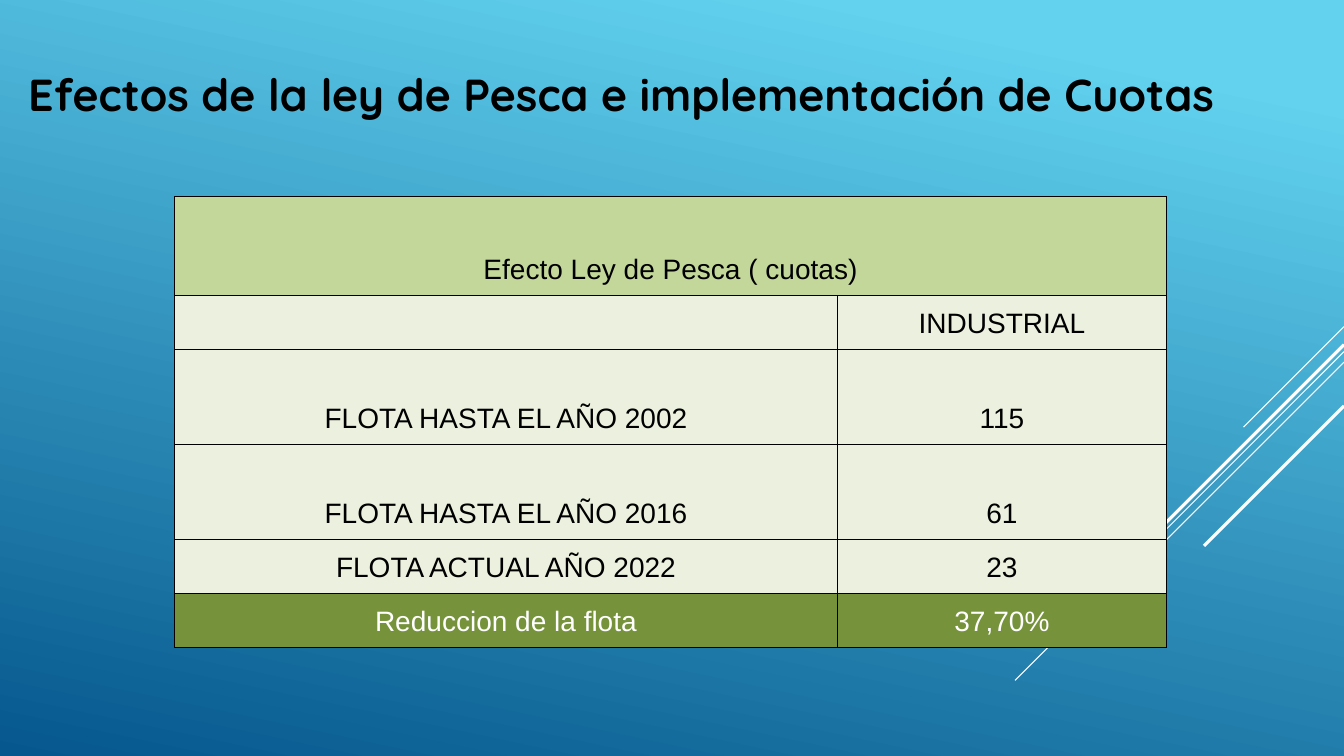
from lxml import etree
from pptx import Presentation
from pptx.dml.color import RGBColor
from pptx.enum.shapes import MSO_CONNECTOR
from pptx.enum.text import MSO_ANCHOR, MSO_AUTO_SIZE, PP_ALIGN
from pptx.oxml.ns import qn
from pptx.util import Inches, Pt

STRAIGHT = MSO_CONNECTOR.STRAIGHT
BOTTOM, MIDDLE = MSO_ANCHOR.BOTTOM, MSO_ANCHOR.MIDDLE
CENTER, LEFT = PP_ALIGN.CENTER, PP_ALIGN.LEFT
GROW = MSO_AUTO_SIZE.SHAPE_TO_FIT_TEXT
TITLE_ONLY = 5

BLACK = RGBColor(0x00, 0x00, 0x00)
WHITE = RGBColor(0xFF, 0xFF, 0xFF)
SKY = RGBColor(0x62, 0xD2, 0xEF)
OCEAN = RGBColor(0x05, 0x57, 0x8D)
HEADER_GREEN = RGBColor(0xC4, 0xD7, 0x9B)
PALE_GREEN = RGBColor(0xEB, 0xF1, 0xDE)
TOTAL_GREEN = RGBColor(0x76, 0x93, 0x3C)

SLIDE_WIDTH, SLIDE_HEIGHT = Inches(13.33), Inches(7.5)

# Start and reach in percent of the slide height, width in points
DIAGONALS = [
    (43.2, 13.3, 0.75),
    (46.5, 43.5, 0.75),
    (47.9, 27.6, 0.75),
    (45.6, 25.5, 2.25),
    (53.7, 18.5, 2.25),
]

# Height in percent of the slide, fill, text colour, cell texts
FLEET_ROWS = [
    (13.1, HEADER_GREEN, BLACK, ["Efecto Ley de Pesca ( cuotas)"]),
    (7.1, PALE_GREEN, BLACK, ["", "INDUSTRIAL"]),
    (12.6, PALE_GREEN, BLACK, ["FLOTA HASTA EL AÑO 2002", "115"]),
    (12.6, PALE_GREEN, BLACK, ["FLOTA HASTA EL AÑO 2016", "61"]),
    (7.1, PALE_GREEN, BLACK, ["FLOTA ACTUAL AÑO 2022", "23"]),
    (7.1, TOTAL_GREEN, WHITE, ["Reduccion de la flota", "37,70%"]),
]
FLEET_COLUMNS = [49.3, 24.5]

CELL_FORMAT = {
    "vertical_anchor": BOTTOM,
    "margin_left": Inches(0.01),
    "margin_right": Inches(0.01),
    "margin_top": Inches(0.01),
    "margin_bottom": Inches(0.1),
}


def across(percent):
    return round(SLIDE_WIDTH * percent / 100)


def down(percent):
    return round(SLIDE_HEIGHT * percent / 100)


def apply(target, values):
    for name, value in values.items():
        setattr(target, name, value)


def write(para, text, color, font):
    span = para.add_run()
    span.text = text
    span.font.color.rgb = color
    apply(span.font, font)


def paint_background(page):
    fill = page.background.fill
    fill.gradient()
    fill.gradient_angle = 258
    for stop, position, color in zip(fill.gradient_stops, (0.1, 1), (SKY, OCEAN)):
        stop.position = position
        stop.color.rgb = color


def add_diagonal(page, start, reach, width):
    """Draw a 45 degree line down and left from the right edge."""
    line = page.shapes.add_connector(
        STRAIGHT, SLIDE_WIDTH, down(start),
        SLIDE_WIDTH - down(reach), down(start + reach))
    line.line.color.rgb = WHITE
    line.line.width = Pt(width)
    etree.SubElement(line._element.spPr, qn("a:effectLst"))


def set_title(page, text):
    title = page.shapes.title
    apply(title, {"left": across(1.35), "top": down(8.1),
                  "width": across(95.4), "height": down(8.5)})
    apply(title.text_frame, {"word_wrap": True, "auto_size": GROW,
                             "vertical_anchor": MIDDLE})
    para = title.text_frame.paragraphs[0]
    para.alignment = LEFT
    write(para, text, BLACK, {"name": "Quicksand", "size": Pt(32), "bold": True})


def add_borders(cell):
    properties = cell._tc.get_or_add_tcPr()
    for side in ("lnL", "lnR", "lnT", "lnB"):
        border = etree.SubElement(properties, qn(f"a:{side}"), w=str(Pt(0.75)))
        fill = etree.SubElement(border, qn("a:solidFill"))
        etree.SubElement(fill, qn("a:srgbClr"), val=str(BLACK))


def fill_cell(cell, text, fill, color):
    add_borders(cell)
    cell.fill.solid()
    cell.fill.fore_color.rgb = fill
    apply(cell, CELL_FORMAT)
    if text:
        para = cell.text_frame.paragraphs[0]
        apply(para, {"alignment": CENTER, "line_spacing": 1.15})
        write(para, text, color, {"name": "Arial", "size": Pt(20)})


def add_fleet_table(page):
    heights = [row[0] for row in FLEET_ROWS]
    table = page.shapes.add_table(
        len(FLEET_ROWS), len(FLEET_COLUMNS), across(13), down(26),
        across(sum(FLEET_COLUMNS)), down(sum(heights))).table
    apply(table, {"first_row": False, "horz_banding": False})
    for column, width in zip(table.columns, FLEET_COLUMNS):
        column.width = across(width)
    for row, (height, fill, color, texts) in zip(table.rows, FLEET_ROWS):
        row.height = down(height)
        if len(texts) == 1:
            row.cells[0].merge(row.cells[1])
        for index, cell in enumerate(row.cells):
            text = texts[index] if index < len(texts) else ""
            fill_cell(cell, text, fill, color)


def main():
    deck = Presentation()
    apply(deck, {"slide_width": SLIDE_WIDTH, "slide_height": SLIDE_HEIGHT})
    page = deck.slides.add_slide(deck.slide_layouts[TITLE_ONLY])
    paint_background(page)
    for diagonal in DIAGONALS:
        add_diagonal(page, *diagonal)
    set_title(page, "Efectos de la ley de Pesca e implementación de Cuotas")
    add_fleet_table(page)
    deck.save("out.pptx")


if __name__ == "__main__":
    main()
